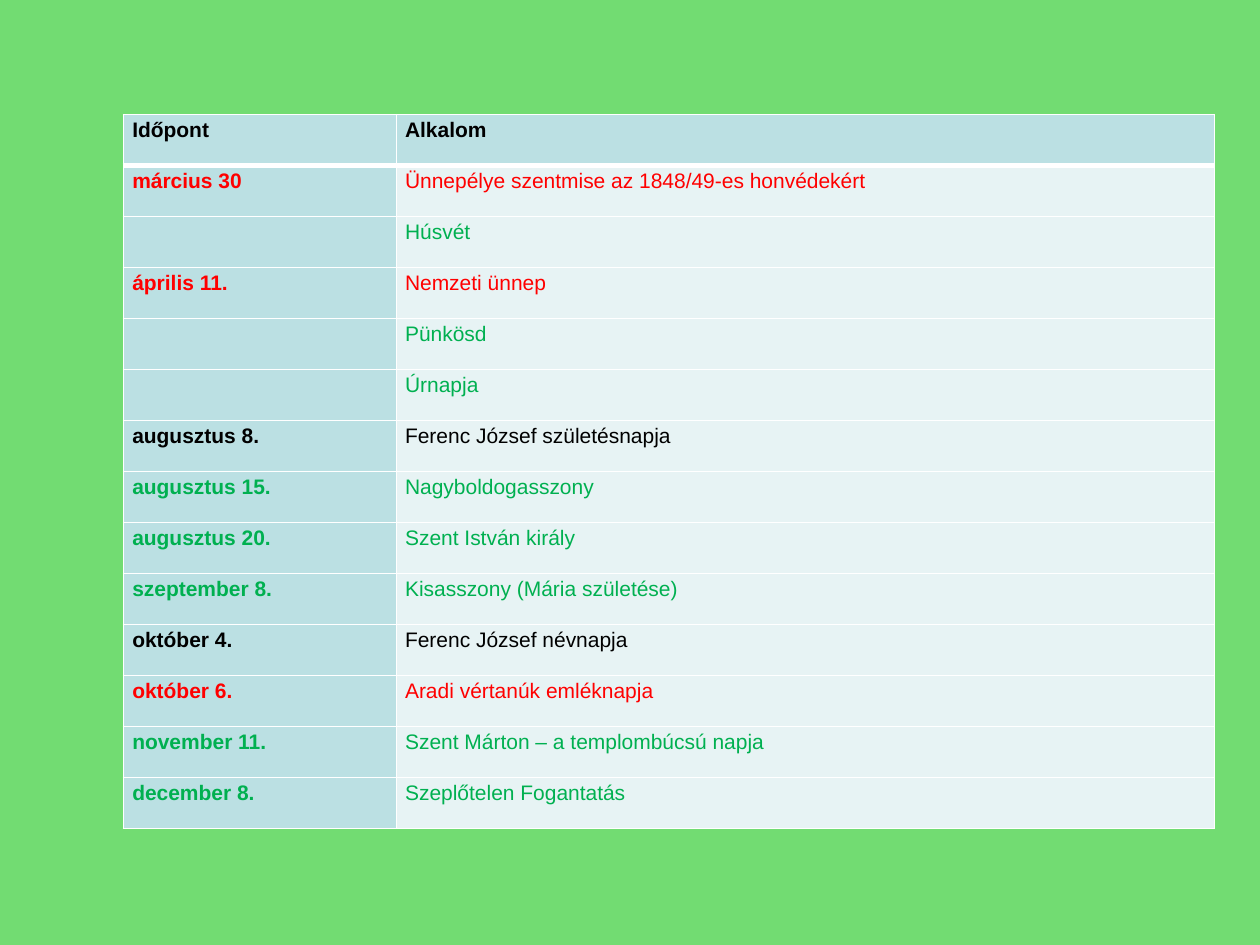
from dataclasses import dataclass

from lxml import etree
from pptx import Presentation
from pptx.dml.color import RGBColor
from pptx.oxml.ns import qn
from pptx.util import Inches, Pt


@dataclass(frozen=True)
class Theme:
    background: str = "72DC72"
    date_fill: str = "BBE0E3"
    event_fill: str = "E7F3F4"
    border: str = "FFFFFF"
    plain: str = "000000"
    national: str = "FF0000"
    church: str = "00B050"
    font: str = "Arial"
    text_size: int = 12
    line_spacing: float = 1.15
    thin: int = 1
    thick: int = 3


THEME = Theme()
SLIDE_W, SLIDE_H = Inches(10), Inches(7.5)
CALENDAR_BOX = (Inches(0.98), Inches(0.91), Inches(8.66), Inches(5.67))
DATE_SHARE = 0.25
CELL_INSET = Inches(0.07)

# Date, occasion, text colour
CALENDAR = [
    ("Időpont", "Alkalom", THEME.plain),
    ("március 30", "Ünnepélye szentmise az 1848/49-es honvédekért", THEME.national),
    ("", "Húsvét", THEME.church),
    ("április 11.", "Nemzeti ünnep", THEME.national),
    ("", "Pünkösd", THEME.church),
    ("", "Úrnapja", THEME.church),
    ("augusztus 8.", "Ferenc József születésnapja", THEME.plain),
    ("augusztus 15.", "Nagyboldogasszony", THEME.church),
    ("augusztus 20.", "Szent István király", THEME.church),
    ("szeptember 8.", "Kisasszony (Mária születése)", THEME.church),
    ("október 4.", "Ferenc József névnapja", THEME.plain),
    ("október 6.", "Aradi vértanúk emléknapja", THEME.national),
    ("november 11.", "Szent Márton – a templombúcsú napja", THEME.church),
    ("december 8.", "Szeplőtelen Fogantatás", THEME.church),
]


def set_borders(cell, top, bottom):
    """Draw the four cell edges; only top and bottom vary in width."""
    properties = cell._tc.get_or_add_tcPr()
    widths = {"lnL": THEME.thin, "lnR": THEME.thin, "lnT": top, "lnB": bottom}
    for edge, width in widths.items():
        line = etree.SubElement(properties, qn(f"a:{edge}"), w=str(Pt(width)))
        fill = etree.SubElement(line, qn("a:solidFill"))
        etree.SubElement(fill, qn("a:srgbClr"), val=THEME.border)


def fill_cell(cell, wording, color, fill, bold):
    cell.margin_left = cell.margin_right = CELL_INSET
    cell.margin_top = cell.margin_bottom = 0
    cell.fill.solid()
    cell.fill.fore_color.rgb = RGBColor.from_string(fill)
    cell.text_frame.text = wording
    paragraph = cell.text_frame.paragraphs[0]
    paragraph.line_spacing = THEME.line_spacing
    for run in paragraph.runs:
        run.font.name = THEME.font
        run.font.size = Pt(THEME.text_size)
        run.font.bold = bold
        run.font.color.rgb = RGBColor.from_string(color)


def add_calendar(slide, box, entries):
    left, top, width, height = box
    calendar = slide.shapes.add_table(len(entries), 2, left, top, width, height).table

    # Column and row grid
    calendar.columns[0].width = int(width * DATE_SHARE)
    calendar.columns[1].width = width - calendar.columns[0].width
    for row in calendar.rows:
        row.height = height // len(entries)

    # Header on row 0, bold dates in column 0
    for r, (date, occasion, color) in enumerate(entries):
        for c, wording in enumerate((date, occasion)):
            cell = calendar.cell(r, c)
            emphasized = r == 0 or c == 0
            set_borders(
                cell,
                top=THEME.thick if r == 1 else THEME.thin,
                bottom=THEME.thick if r == 0 else THEME.thin,
            )
            fill = THEME.date_fill if emphasized else THEME.event_fill
            fill_cell(cell, wording, color, fill, emphasized)


def main():
    prs = Presentation()
    prs.slide_width, prs.slide_height = SLIDE_W, SLIDE_H
    slide = prs.slides.add_slide(prs.slide_layouts[6])
    slide.background.fill.solid()
    slide.background.fill.fore_color.rgb = RGBColor.from_string(THEME.background)
    add_calendar(slide, CALENDAR_BOX, CALENDAR)
    prs.save("out.pptx")


if __name__ == "__main__":
    main()
